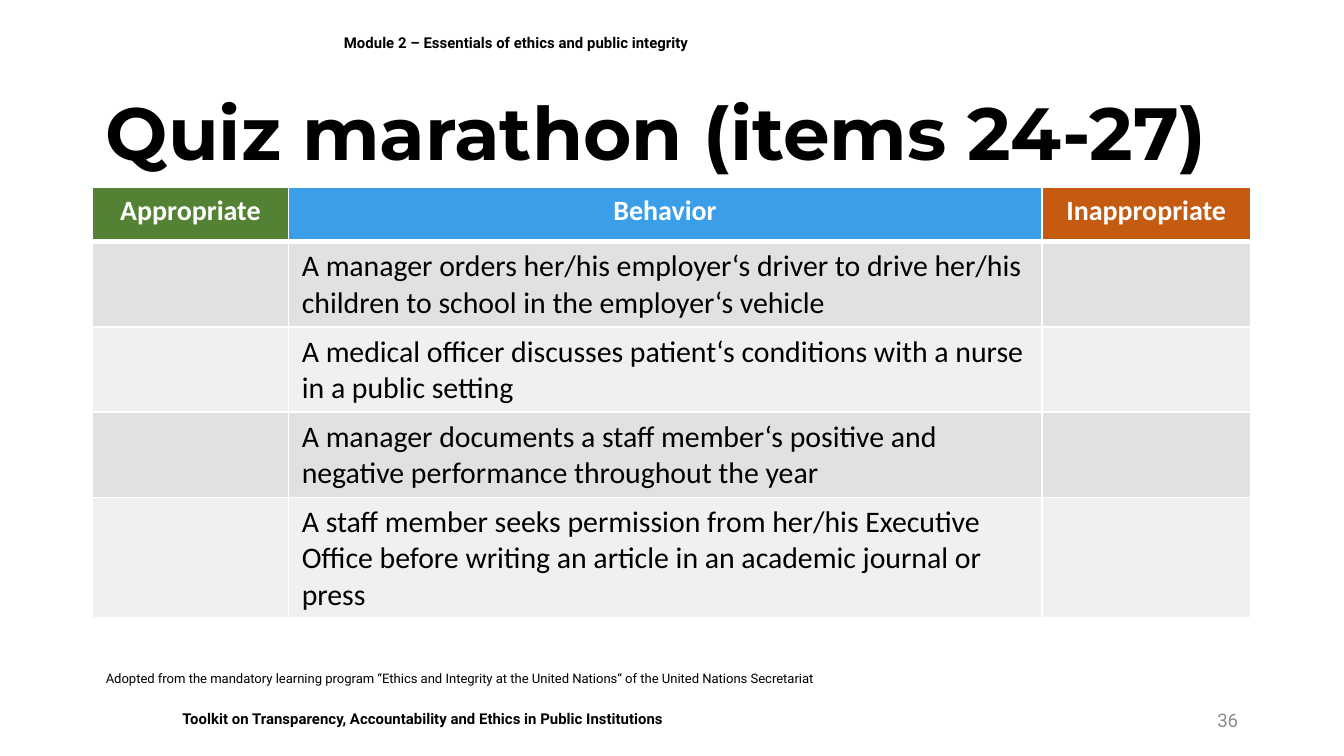
from lxml.etree import SubElement
from pptx import Presentation
from pptx.dml.color import RGBColor
from pptx.enum.text import MSO_ANCHOR, PP_ALIGN
from pptx.oxml.ns import qn
from pptx.util import Cm, Pt

COLORS = {
    "white": "FFFFFF",
    "black": "000000",
    "page": "8C8C8C",
    "appropriate": "548235",
    "behavior": "3A9EE9",
    "inappropriate": "C55A11",
    "odd": "E1E1E1",
    "even": "F0F0F0",
}
HEADINGS = ["Appropriate", "Behavior", "Inappropriate"]
BEHAVIORS = [
    "A manager orders her/his employer‘s driver to drive her/his children to school in the employer‘s vehicle",
    "A medical officer discusses patient‘s conditions with a nurse in a public setting",
    "A manager documents a staff member‘s positive and negative performance throughout the year",
    "A staff member seeks permission from her/his Executive Office before writing an article in an academic journal or press",
]
COLUMN_WIDTHS = [3.7, 14.24, 3.95]
ROW_HEIGHTS = [1.04, 1.61, 1.61, 1.61, 2.28]
LEFT, WIDTH = 1.75, 21.89


def rgb(color):
    return RGBColor.from_string(COLORS[color])


def add_run(paragraph, text, font, size, color="black", bold=False):
    run = paragraph.add_run()
    run.text = text
    run.font.name = font
    run.font.size = Pt(size)
    run.font.bold = bold
    run.font.color.rgb = rgb(color)


def add_text(slide, box, text, size, font="Roboto", color="black", bold=False,
             align=PP_ALIGN.LEFT, anchor=MSO_ANCHOR.MIDDLE):
    label = slide.shapes.add_textbox(*(Cm(length) for length in box))
    frame = label.text_frame
    frame.word_wrap = True
    frame.vertical_anchor = anchor
    paragraph = frame.paragraphs[0]
    paragraph.alignment = align
    add_run(paragraph, text, font, size, color, bold)
    return label


def set_borders(cell, bottom_width):
    properties = cell._tc.get_or_add_tcPr()
    for side, width in (("L", 1), ("R", 1), ("T", 1), ("B", bottom_width)):
        line = SubElement(properties, qn(f"a:ln{side}"), w=str(Pt(width)))
        fill = SubElement(line, qn("a:solidFill"))
        SubElement(fill, qn("a:srgbClr"), val=COLORS["white"])


def style_cell(cell, color, bottom_width=1):
    set_borders(cell, bottom_width)
    cell.fill.solid()
    cell.fill.fore_color.rgb = rgb(color)


def add_quiz(slide):
    quiz = slide.shapes.add_table(
        len(ROW_HEIGHTS), len(COLUMN_WIDTHS),
        Cm(LEFT), Cm(3.53), Cm(WIDTH), Cm(sum(ROW_HEIGHTS))).table
    for column, width in zip(quiz.columns, COLUMN_WIDTHS):
        column.width = Cm(width)
    for row, height in zip(quiz.rows, ROW_HEIGHTS):
        row.height = Cm(height)
    for index, heading in enumerate(HEADINGS):
        cell = quiz.cell(0, index)
        style_cell(cell, heading.lower(), 3)
        paragraph = cell.text_frame.paragraphs[0]
        paragraph.alignment = PP_ALIGN.CENTER
        add_run(paragraph, heading, "Calibri", 15, "white", True)
    for number, behavior in enumerate(BEHAVIORS, 1):
        for index in range(len(HEADINGS)):
            style_cell(quiz.cell(number, index), "odd" if number % 2 else "even")
        paragraph = quiz.cell(number, 1).text_frame.paragraphs[0]
        add_run(paragraph, behavior, "Calibri", 16)


def main():
    presentation = Presentation()
    presentation.slide_width = Cm(25.4)
    presentation.slide_height = Cm(14.29)
    slide = presentation.slides.add_slide(presentation.slide_layouts[6])

    toolkit = add_text(
        slide, (3.2, 13.28, 18.21, 0.61),
        "Toolkit on Transparency, Accountability and Ethics in Public Institutions",
        8, bold=True, anchor=MSO_ANCHOR.TOP)
    toolkit.fill.solid()
    toolkit.fill.fore_color.rgb = rgb("white")

    add_quiz(slide)
    add_text(slide, (6.25, 0.25, 17.4, 1.12),
             "Module 2 – Essentials of ethics and public integrity", 8, bold=True)
    add_text(slide, (17.93, 13.23, 5.72, 0.76), "36", 10, color="page",
             align=PP_ALIGN.RIGHT)
    title = add_text(slide, (LEFT, 1.63, WIDTH, 1.9), "Quiz marathon (items 24-27)",
                     39.6, "Montserrat", bold=True)
    title.text_frame.paragraphs[0].line_spacing = 0.9
    add_text(slide, (LEFT, 12.55, 14.05, 0.56),
             "Adopted from the mandatory learning program “Ethics and Integrity at the United Nations“ of the United Nations Secretariat",
             7, anchor=MSO_ANCHOR.TOP)
    presentation.save("out.pptx")


if __name__ == "__main__":
    main()
